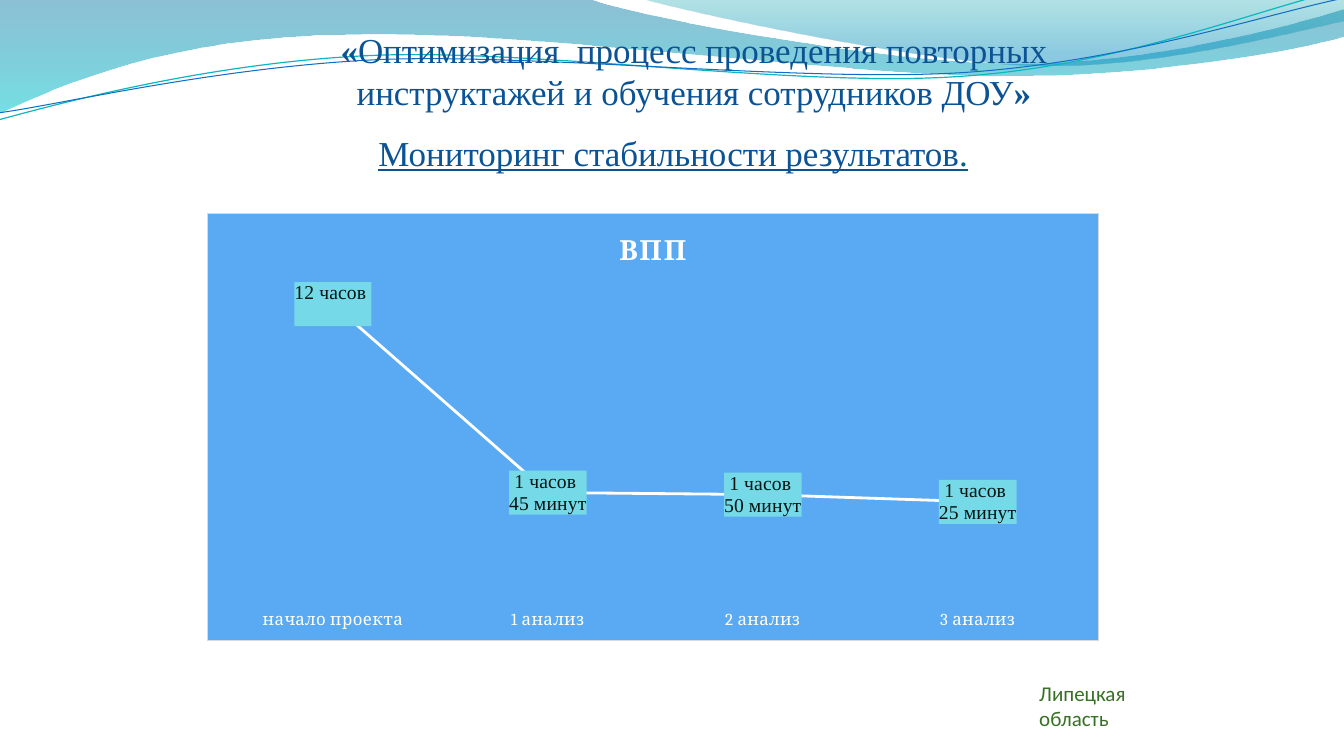
import pptx
import pptx.chart.data
import pptx.dml.color
import pptx.enum.chart
import pptx.enum.text
import pptx.oxml
import pptx.oxml.ns
import pptx.util

Cm = pptx.util.Cm
Pt = pptx.util.Pt

COLORS = {
    "heading": "0B5394", "heading_end": "04617B", "region": "387026",
    "black": "000000", "white": "FFFFFF", "chart": "59AAF2",
    "chart_border": "D9D9D9", "label": "76D9E8", "label_text": "021510",
    "thin_teal": "0AB8BF", "thin_blue": "0F6FC6",
    "deep_blue": "0074A1", "aqua": "00C6CF", "teal": "00A1A9", "sea": "008BBF",
}
SERIF, CHART_FONT, SANS = "Times New Roman", "Cambria", "Calibri"

# Outlines in cm: a start, then points (2 numbers) or Bezier segments (6 numbers).
# Gradient stops: position, colour, opacity in percent.
WAVES = [
    {"start": (0, 0),
     "steps": [(14.91, -0.02), (16.1, 0.43, 22.48, 1.6, 25.68, 1.6),
               (28.91, 1.6, 32.46, 0.66, 33.86, 0.23), (33.91, 0.91),
               (33.3, 1.12, 29.46, 1.93, 25.25, 1.91),
               (21.06, 1.91, 12.93, 0.71, 8.71, 0.87),
               (4.37, 0.91, 1.55, 2.11, -0.03, 2.87)],
     "stops": [(0, "deep_blue", 45), (1, "aqua", 55)]},
    {"start": (16.23, -0.02),
     "steps": [(17.25, 0.28, 23.09, 1.57, 26.04, 1.65),
               (28.98, 1.75, 32.56, 0.81, 33.86, 0.53), (33.86, 0)],
     "stops": [(0, "teal", 30), (0.8, "sea", 45)]},
    {"start": (-0.03, 3.02),
     "steps": [(1.63, 2.57, 5.36, 1.57, 9.37, 1.4),
               (13.39, 1.22, 20.07, 2.21, 24.13, 1.93),
               (28.19, 1.68, 31.8, 0.2, 33.81, -0.25)],
     "line": ("thin_teal", 0.85)},
    {"start": (0, 2.84),
     "steps": [(1.6, 2.62, 5.54, 1.68, 9.6, 1.5),
               (13.64, 1.35, 20.22, 2.08, 24.26, 1.83),
               (28.32, 1.57, 31.88, 0.36, 33.88, -0.05)],
     "line": ("thin_blue", 0.75)},
]

TITLE = [("«", {"bold": True}),
         ("Оптимизация  процесс проведения повторных инструктажей "
          "и обучения сотрудников ДОУ", {}),
         ("»", {"bold": True})]
SUBTITLE = [("Мониторинг стабильности результатов", {}),
            (".", {"color": "heading_end"})]
REGION = ["Липецкая", "область"]

CHART_TITLE = "ВПП"
STAGES = [("начало проекта", 1480, "12 часов \n "),
          ("1 анализ", 560, "1 часов \n45 минут"),
          ("2 анализ", 550, "1 часов \n50 минут"),
          ("3 анализ", 515, "1 часов \n25 минут")]
PLOT_AREA = {"x": 0.02, "y": 0.155, "w": 0.965, "h": 0.767}

NAMESPACES = pptx.oxml.ns.nsdecls("a", "c")
xml = pptx.oxml.parse_xml


def rgb(name):
    return pptx.dml.color.RGBColor.from_string(COLORS[name])


def style(font, size, face, color, bold=False, underline=None):
    font.size, font.name, font.bold, font.underline = Pt(size), face, bold, underline
    font.color.rgb = rgb(color)


def write(para, spans, align=None, **look):
    """Fill a paragraph with (text, overrides) spans sharing one look."""
    para.alignment, para.line_spacing = align, 1.0
    for text, changes in spans:
        span = para.add_run()
        span.text = text
        style(span.font, **{**look, **changes})


def place(box, left, top, width, height):
    box.left, box.top, box.width, box.height = map(Cm, (left, top, width, height))
    frame = box.text_frame
    frame.word_wrap = True
    frame.auto_size = pptx.enum.text.MSO_AUTO_SIZE.NONE
    frame.vertical_anchor = pptx.enum.text.MSO_ANCHOR.TOP
    return frame


def bend(wave, steps):
    """Turn the straight segments of six-number steps into Bezier curves."""
    for node, step in zip(wave.element.xpath(".//a:lnTo"), steps):
        if len(step) == 6:
            points = "".join(f'<a:pt x="{Cm(x) - wave.left}" y="{Cm(y) - wave.top}"/>'
                             for x, y in zip(step[::2], step[1::2]))
            curve = xml(f'<a:cubicBezTo {NAMESPACES}>{points}</a:cubicBezTo>')
            node.getparent().replace(node, curve)


def add_wave(page, start, steps, stops=None, line=None):
    builder = page.shapes.build_freeform(*map(Cm, start))
    builder.add_line_segments([(Cm(step[-2]), Cm(step[-1])) for step in steps],
                              close=bool(stops))
    wave = builder.convert_to_shape()
    bend(wave, steps)
    wave.shadow.inherit = False
    if line:
        wave.fill.background()
        wave.line.color.rgb, wave.line.width = rgb(line[0]), Pt(line[1])
        return
    wave.line.fill.background()
    wave.fill.gradient()
    wave.fill.gradient_angle = 270
    for stop, (position, color, _) in zip(wave.fill.gradient_stops, stops):
        stop.position, stop.color.rgb = position, rgb(color)
    for node, (_, _, opacity) in zip(wave.element.xpath(".//a:gs/a:srgbClr"), stops):
        node.append(xml(f'<a:alpha {NAMESPACES} val="{opacity * 1000}"/>'))


def area_format(fill, border=None):
    line = (f'<a:ln w="9525"><a:solidFill><a:srgbClr val="{COLORS[border]}"/>'
            '</a:solidFill></a:ln>' if border else '<a:ln><a:noFill/></a:ln>')
    return xml(f'<c:spPr {NAMESPACES}><a:solidFill><a:srgbClr val="{COLORS[fill]}"/>'
               f'</a:solidFill>{line}</c:spPr>')


def add_monitoring_chart(page):
    kinds = pptx.enum.chart
    data = pptx.chart.data.CategoryChartData()
    data.categories = [stage for stage, _, _ in STAGES]
    data.add_series(CHART_TITLE, [minutes for _, minutes, _ in STAGES])
    chart = page.shapes.add_chart(kinds.XL_CHART_TYPE.LINE, Cm(5.22), Cm(5.36),
                                  Cm(22.48), Cm(10.8), data).chart
    style(chart.font, 10, CHART_FONT, "black")
    chart.has_legend = False
    chart.has_title = True
    write(chart.chart_title.text_frame.paragraphs[0], [(CHART_TITLE, {})],
          size=19.9, face=CHART_FONT, color="white", bold=True)
    chart.chart_title.include_in_layout = False

    values, stages = chart.value_axis, chart.category_axis
    values.minimum_scale, values.maximum_scale = 0, 1600
    values.has_major_gridlines = False
    values.visible = False
    stages.major_tick_mark = kinds.XL_TICK_MARK.NONE
    stages.format.line.fill.background()
    style(stages.tick_labels.font, 12, CHART_FONT, "white")

    chart.plots[0].vary_by_categories = False
    series = chart.plots[0].series[0]
    series.smooth = False
    series.marker.style = kinds.XL_MARKER_STYLE.NONE
    series.format.line.color.rgb, series.format.line.width = rgb("white"), Pt(2)
    labels = series.data_labels
    labels.show_value = True
    labels.position = kinds.XL_LABEL_POSITION.CENTER
    style(labels.font, 14, SERIF, "label_text", bold=True)
    for index, (_, _, text) in enumerate(STAGES):
        label = series.points[index].data_label
        label.text_frame.text = text
        label.position = kinds.XL_LABEL_POSITION.CENTER
        for para in label.text_frame.paragraphs:
            for span in para.runs:
                style(span.font, 14, SERIF, "label_text")

    root = chart.element
    for text_node in root.xpath(".//c:dLbl/c:tx"):
        text_node.addnext(area_format("label"))
    root.xpath("./c:chart")[0].addnext(area_format("chart", "chart_border"))
    for part, spacing in (("c:title//a:rPr", "100"), ("c:catAx//a:defRPr", "30")):
        for node in root.xpath(f".//{part}"):
            node.set("spc", spacing)
    plot_area = root.xpath(".//c:plotArea")[0]
    for layout in plot_area.xpath("./c:layout"):
        plot_area.remove(layout)
    modes = "".join(f'<c:{side}Mode val="edge"/>' for side in "xy")
    sizes = "".join(f'<c:{side} val="{size}"/>' for side, size in PLOT_AREA.items())
    plot_area.insert(0, xml(f'<c:layout {NAMESPACES}><c:manualLayout><c:layoutTarget '
                            f'val="inner"/>{modes}{sizes}</c:manualLayout></c:layout>'))


def main():
    deck = pptx.Presentation()
    deck.slide_width, deck.slide_height = Cm(33.87), Cm(19.05)
    page = deck.slides.add_slide(deck.slide_layouts[5])
    for wave in WAVES:
        add_wave(page, **wave)

    title = page.shapes.title
    title.element.getparent().append(title.element)
    heading = {"size": 25, "face": SERIF, "color": "heading",
               "align": pptx.enum.text.PP_ALIGN.CENTER}
    write(place(title, 7.16, 0.58, 20.65, 2.39).paragraphs[0], TITLE, **heading)

    region = page.shapes.add_textbox(0, 0, 0, 0)
    region.fill.solid()
    region.fill.fore_color.rgb = rgb("white")
    frame = place(region, 25.94, 17.02, 3.02, 1.55)
    for index, text in enumerate(REGION):
        para = frame.add_paragraph() if index else frame.paragraphs[0]
        write(para, [(text, {})], size=15, face=SANS, color="region")

    subtitle = page.shapes.add_textbox(0, 0, 0, 0)
    write(place(subtitle, 8.8, 3.18, 16.33, 1.32).paragraphs[0], SUBTITLE,
          underline=True, **heading)
    add_monitoring_chart(page)
    deck.save("out.pptx")


if __name__ == "__main__":
    main()
